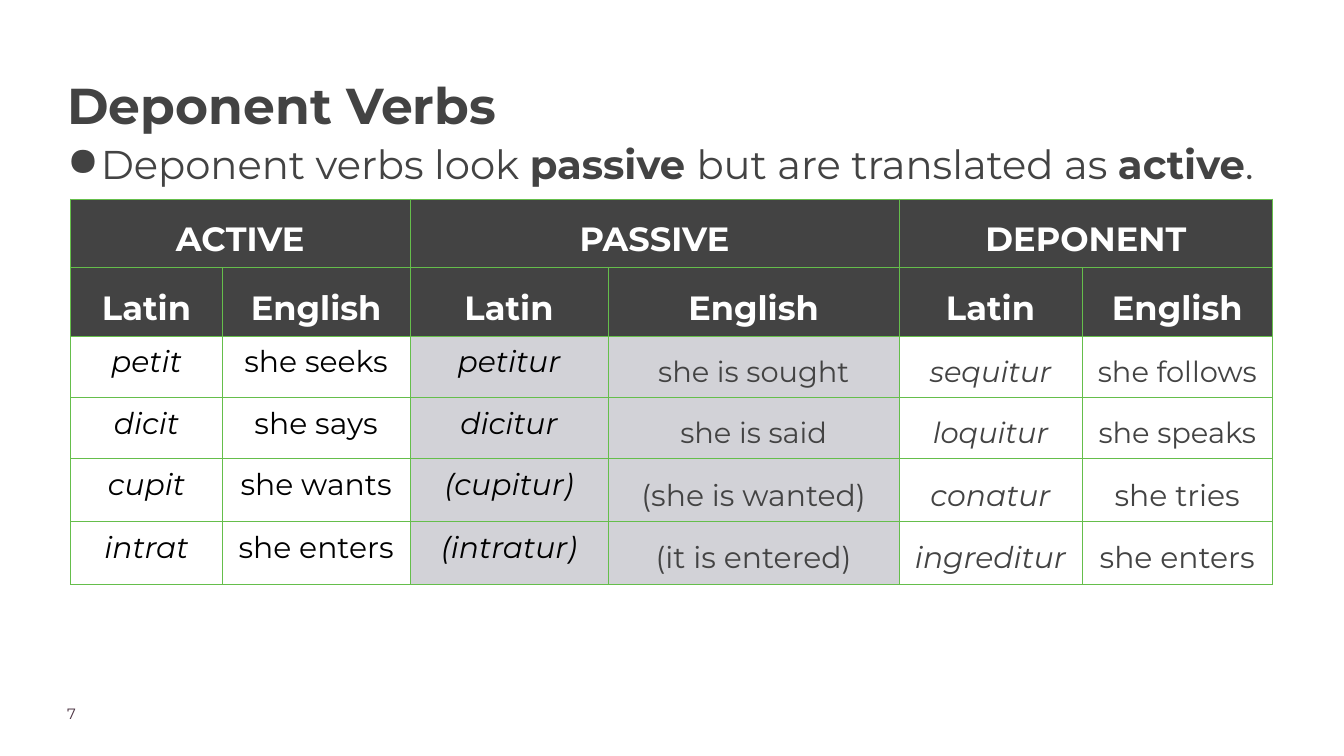
from dataclasses import dataclass

from lxml import etree
from pptx import Presentation
from pptx.dml.color import RGBColor
from pptx.enum.text import PP_ALIGN
from pptx.oxml.ns import qn
from pptx.util import Pt

CENTER = PP_ALIGN.CENTER


@dataclass(frozen=True)
class Theme:
    font: str = "Montserrat"
    dark: str = "434343"
    black: str = "000000"
    white: str = "FFFFFF"
    shade: str = "D2D2D7"
    border: str = "65BE4B"
    number: str = "4B3241"
    title_size: float = 54
    body_size: float = 43
    header_size: float = 36
    cell_size: float = 32
    small_cell_size: float = 31
    number_size: float = 16
    line_spacing: float = 1.15
    table_spacing: float = 1.3


THEME = Theme()
COLUMN_WIDTHS = [162.72, 200.88, 212.4, 311.76, 195.84, 204.48]
ROW_HEIGHT = 50.4
VOICES = ["ACTIVE", "PASSIVE", "DEPONENT"]
LANGUAGES = ["Latin", "English"]
VERBS = [
    ["petit", "she seeks", "petitur", "she is sought", "sequitur", "she follows"],
    ["dicit", "she says", "dicitur", "she is said", "loquitur", "she speaks"],
    ["cupit", "she wants", "(cupitur)", "(she is wanted)", "conatur", "she tries"],
    ["intrat", "she enters", "(intratur)", "(it is entered)", "ingreditur", "she enters"],
]


def add_run(paragraph, text, size, color, bold=False, italic=False):
    run = paragraph.add_run()
    run.text = text
    run.font.name = THEME.font
    run.font.size = Pt(size)
    run.font.color.rgb = RGBColor.from_string(color)
    run.font.bold = bold
    run.font.italic = italic


def add_text_paragraph(slide, box):
    frame = slide.shapes.add_textbox(*map(Pt, box)).text_frame
    frame.word_wrap = True
    frame.margin_left = frame.margin_right = 0
    frame.margin_top = frame.margin_bottom = 0
    return frame.paragraphs[0]


def add_title(slide, box):
    paragraph = add_text_paragraph(slide, box)
    paragraph.line_spacing = THEME.line_spacing
    add_run(paragraph, "Deponent Verbs", THEME.title_size, THEME.dark, bold=True)


def add_bullet(paragraph, character, color, margin, indent):
    properties = paragraph._p.get_or_add_pPr()
    properties.set("marL", str(Pt(margin)))
    properties.set("indent", str(Pt(indent)))
    bullet_color = etree.SubElement(properties, qn("a:buClr"))
    etree.SubElement(bullet_color, qn("a:srgbClr"), val=color)
    etree.SubElement(properties, qn("a:buChar"), char=character)


def add_rule(slide, box):
    paragraph = add_text_paragraph(slide, box)
    add_bullet(paragraph, "●", THEME.dark, 36, -39.6)
    paragraph.line_spacing = THEME.line_spacing
    for text, bold in [
        ("Deponent verbs look ", False),
        ("passive ", True),
        ("but are translated as ", False),
        ("active", True),
        (".", False),
    ]:
        add_run(paragraph, text, THEME.body_size, THEME.dark, bold=bold)


def add_page_number(slide, box):
    paragraph = add_text_paragraph(slide, box)
    add_run(paragraph, "7", THEME.number_size, THEME.number)


def style_cell(cell, fill):
    cell.margin_left = cell.margin_right = Pt(14.4)
    cell.margin_top = cell.margin_bottom = Pt(8.64)
    properties = cell._tc.get_or_add_tcPr()
    for side in ("a:lnL", "a:lnR", "a:lnT", "a:lnB"):
        line = etree.SubElement(properties, qn(side), w=str(Pt(0.75)))
        solid = etree.SubElement(line, qn("a:solidFill"))
        etree.SubElement(solid, qn("a:srgbClr"), val=THEME.border)
    cell.fill.solid()
    cell.fill.fore_color.rgb = RGBColor.from_string(fill)


def write_cell(cell, text, size, color, spacing=None, bold=False, italic=False):
    paragraph = cell.text_frame.paragraphs[0]
    paragraph.alignment = CENTER
    paragraph.line_spacing = spacing
    add_run(paragraph, text, size, color, bold, italic)


def write_header(cell, text):
    write_cell(cell, text, THEME.header_size, THEME.white, THEME.table_spacing, bold=True)


def write_verb(cell, text, row, column):
    italic = column % 2 == 0
    if column < 3:
        write_cell(cell, text, THEME.cell_size, THEME.black, italic=italic)
    else:
        size = THEME.small_cell_size if row < 2 else THEME.cell_size
        write_cell(cell, text, size, THEME.dark, THEME.table_spacing, italic=italic)


def add_verb_table(slide, left, top):
    row_count = len(VERBS) + 2
    table = slide.shapes.add_table(
        row_count, len(COLUMN_WIDTHS), Pt(left), Pt(top),
        Pt(sum(COLUMN_WIDTHS)), Pt(ROW_HEIGHT * row_count),
    ).table
    table.first_row = False
    table.horz_banding = False
    for column, width in zip(table.columns, COLUMN_WIDTHS):
        column.width = Pt(width)
    for row in range(row_count):
        table.rows[row].height = Pt(ROW_HEIGHT)
        for column in range(len(COLUMN_WIDTHS)):
            body_fill = THEME.shade if column in (2, 3) else THEME.white
            style_cell(table.cell(row, column), THEME.dark if row < 2 else body_fill)

    for index, voice in enumerate(VOICES):
        first = index * len(LANGUAGES)
        table.cell(0, first).merge(table.cell(0, first + 1))
        write_header(table.cell(0, first), voice)
        for offset, language in enumerate(LANGUAGES):
            write_header(table.cell(1, first + offset), language)
    for row, verbs in enumerate(VERBS):
        for column, text in enumerate(verbs):
            write_verb(table.cell(row + 2, column), text, row, column)


def main():
    presentation = Presentation()
    presentation.slide_width = Pt(1440)
    presentation.slide_height = Pt(810)
    slide = presentation.slides.add_slide(presentation.slide_layouts[6])
    add_page_number(slide, (72, 754.56, 113, 28))
    add_title(slide, (72, 69.84, 1313.28, 71.28))
    add_rule(slide, (72, 141.84, 1295.28, 71.28))
    add_verb_table(slide, 75.6, 213.12)
    presentation.save("out.pptx")


if __name__ == "__main__":
    main()
